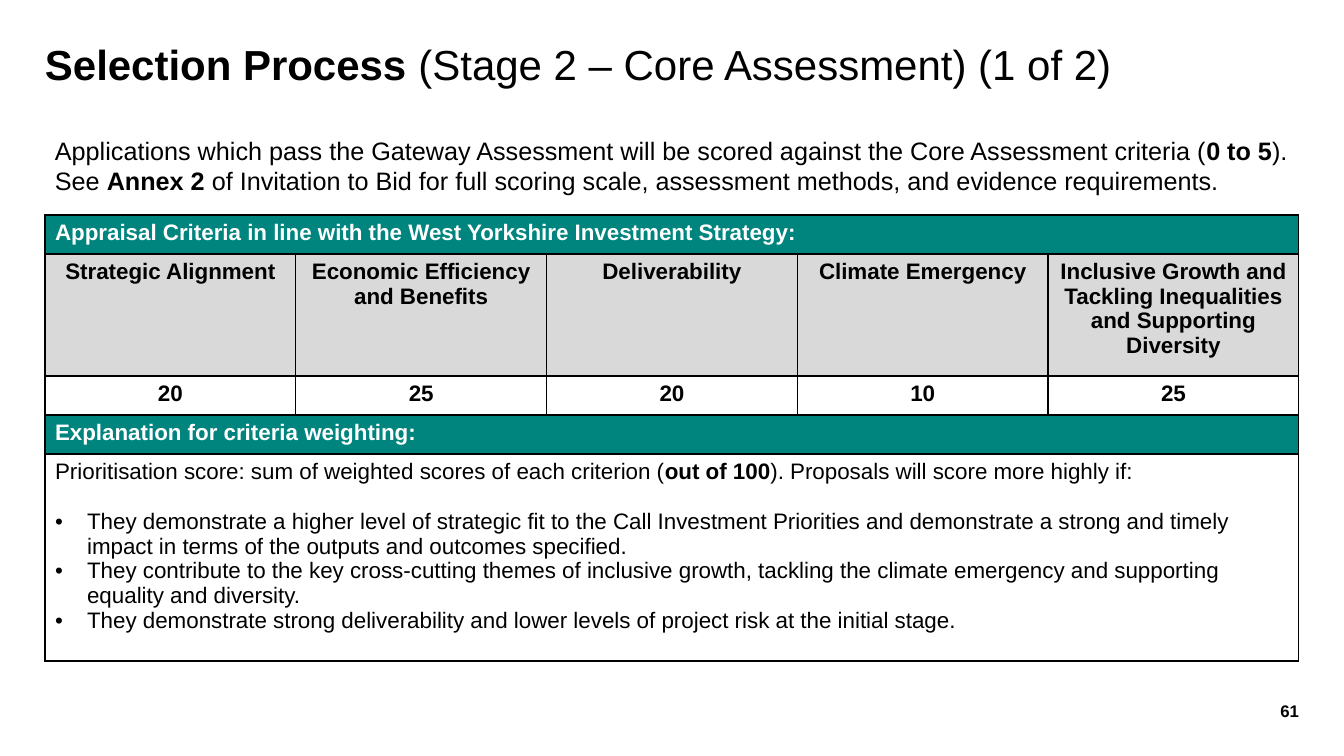
from lxml import etree
from pptx import Presentation
from pptx import util as u
from pptx.dml.color import RGBColor
from pptx.enum import text
from pptx.oxml import ns

BLACK, WHITE, TEAL, GREY = "000000", "FFFFFF", "00847E", "D9D9D9"
LEFT, WIDTH = 45, 1254
BULLET_INDENT = 32

TITLE = [("Selection Process ", True), ("(Stage 2 – Core Assessment) (1 of 2)", False)]
INTRO = [
    ("Applications which pass the Gateway Assessment will be scored against the Core Assessment criteria (", False),
    ("0 to 5", True),
    ("). See ", False),
    ("Annex 2 ", True),
    ("of Invitation to Bid for full scoring scale, assessment methods, and evidence requirements.", False),
]
PAGE = [("61", True)]
CRITERIA = [
    ("Strategic Alignment", 20),
    ("Economic Efficiency and Benefits", 25),
    ("Deliverability", 20),
    ("Climate Emergency", 10),
    ("Inclusive Growth and Tackling Inequalities and Supporting Diversity", 25),
]
CRITERIA_HEADING = "Appraisal Criteria in line with the West Yorkshire Investment Strategy:"
WEIGHTING_HEADING = "Explanation for criteria weighting:"
SCORE = [
    ("Prioritisation score: sum of weighted scores of each criterion (", False),
    ("out of 100", True),
    ("). Proposals will score more highly if:", False),
]
REASONS = [
    "They demonstrate a higher level of strategic fit to the Call Investment Priorities and demonstrate a strong and timely impact in terms of the outputs and outcomes specified.",
    "They contribute to the key cross-cutting themes of inclusive growth, tackling the climate emergency and supporting equality and diversity.",
    "They demonstrate strong deliverability and lower levels of project risk at the initial stage.",
]
ROWS = [
    (39, TEAL, WHITE, [CRITERIA_HEADING]),
    (122, GREY, BLACK, [name for name, weight in CRITERIA]),
    (39, None, BLACK, [str(weight) for name, weight in CRITERIA]),
    (39, TEAL, WHITE, [WEIGHTING_HEADING]),
    (207, None, BLACK, [""]),
]


def px(n):
    return u.Emu(round(n * 914400 / 100.8))


def color(value):
    return RGBColor.from_string(value)


def write(paragraph, runs, size, ink=BLACK, align=text.PP_ALIGN.LEFT):
    paragraph.alignment = align
    for words, bold in runs:
        run = paragraph.add_run()
        run.text = words
        run.font.name = "Arial"
        run.font.size = u.Pt(size)
        run.font.bold = bold
        run.font.color.rgb = color(ink)


def add_text(box, runs, size, inset=True, align=text.PP_ALIGN.LEFT):
    frame = slide.shapes.add_textbox(*map(px, box)).text_frame
    frame.word_wrap = True
    if not inset:
        frame.margin_left = frame.margin_right = frame.margin_top = frame.margin_bottom = 0
    write(frame.paragraphs[0], runs, size, align=align)
    return frame


def add_bullet(paragraph):
    props = paragraph._p.get_or_add_pPr()
    props.set("marL", str(px(BULLET_INDENT)))
    props.set("indent", str(-px(BULLET_INDENT)))
    etree.SubElement(props, ns.qn("a:buFont")).set("typeface", "Arial")
    etree.SubElement(props, ns.qn("a:buChar")).set("char", "•")


def style_cell(cell, fill):
    props = cell._tc.get_or_add_tcPr()
    for side in ("lnL", "lnR", "lnT", "lnB"):
        border = etree.SubElement(props, ns.qn("a:" + side), w=str(u.Pt(1)))
        ink = etree.SubElement(border, ns.qn("a:solidFill"))
        etree.SubElement(ink, ns.qn("a:srgbClr"), val=BLACK)
    if fill:
        cell.fill.solid()
        cell.fill.fore_color.rgb = color(fill)
    else:
        cell.fill.background()


deck = Presentation()
deck.slide_width, deck.slide_height = px(1344), px(756)
slide = deck.slides.add_slide(deck.slide_layouts[6])

page = add_text((1227, 691, 72, 40), PAGE, 12, False, text.PP_ALIGN.RIGHT)
page.vertical_anchor = text.MSO_ANCHOR.MIDDLE
title = add_text((LEFT, 44, 1230, 85), TITLE, 30, False)
title.paragraphs[0].line_spacing = 0.9
add_text((LEFT, 130, WIDTH, 72), INTRO, 18)

height = sum(row[0] for row in ROWS)
columns = len(CRITERIA)
table = slide.shapes.add_table(len(ROWS), columns, px(LEFT), px(215), px(WIDTH), px(height)).table
for column in table.columns:
    column.width = px(WIDTH / columns)

for r, (row_height, fill, ink, entries) in enumerate(ROWS):
    table.rows[r].height = px(row_height)
    for c in range(columns):
        style_cell(table.cell(r, c), fill)
    spans = len(entries) == 1
    if spans:
        table.cell(r, 0).merge(table.cell(r, columns - 1))
    align = text.PP_ALIGN.LEFT if spans else text.PP_ALIGN.CENTER
    for c, entry in enumerate(entries):
        if entry:
            write(table.cell(r, c).text_frame.paragraphs[0], [(entry, True)], 16, ink, align)

explanation = table.cell(len(ROWS) - 1, 0).text_frame
write(explanation.paragraphs[0], SCORE, 16)
explanation.paragraphs[0].space_after = u.Pt(18)
for reason in REASONS:
    paragraph = explanation.add_paragraph()
    write(paragraph, [(reason, False)], 16)
    add_bullet(paragraph)

deck.save("out.pptx")
